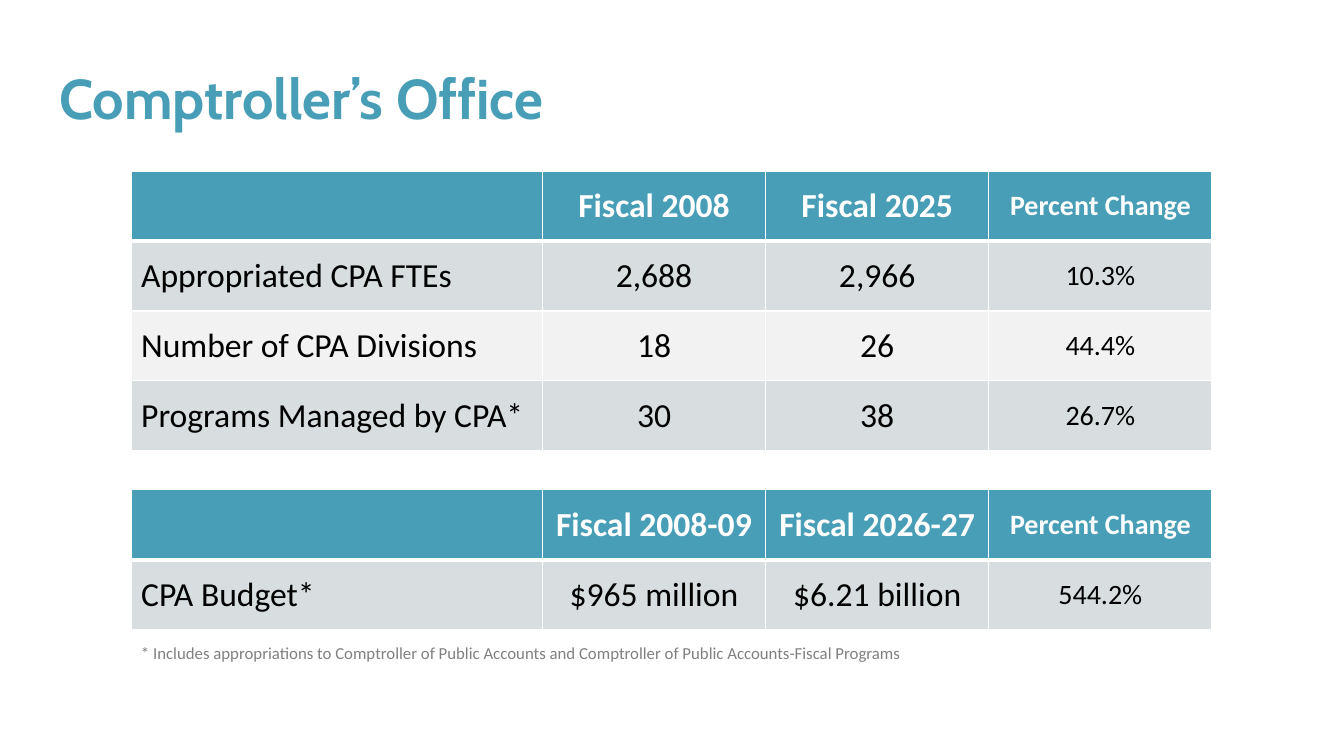
from dataclasses import dataclass

from lxml.etree import SubElement
from pptx import Presentation
from pptx.dml.color import RGBColor
from pptx.enum.text import MSO_ANCHOR as Anchor, PP_ALIGN as Align
from pptx.oxml.ns import qn
from pptx.util import Inches, Pt

TEAL, GREY, LIGHT, WHITE, BLACK = "489EB6", "D8DDE0", "F2F2F2", "FFFFFF", "000000"
LEFT = 1.3
ROW_HEIGHT = 0.693
COL_WIDTHS = (4.08, 2.214, 2.214, 2.214)


@dataclass
class DataTable:
    top: float
    rows: list[tuple[str, ...]]


TABLES = [
    DataTable(1.7, [
        ("", "Fiscal 2008", "Fiscal 2025", "Percent Change"),
        ("Appropriated CPA FTEs", "2,688", "2,966", "10.3%"),
        ("Number of CPA Divisions", "18", "26", "44.4%"),
        ("Programs Managed by CPA*", "30", "38", "26.7%"),
    ]),
    DataTable(4.86, [
        ("", "Fiscal 2008-09", "Fiscal 2026-27", "Percent Change"),
        ("CPA Budget*", "$965 million", "$6.21 billion", "544.2%"),
    ]),
]


def rgb(color: str) -> RGBColor:
    return RGBColor.from_string(color)


def set_font(p, size: float, color: str, bold: bool = False, name: str = "Calibri") -> None:
    f = p.font
    f.name, f.size, f.bold = name, Pt(size), bold
    f.color.rgb = rgb(color)


def set_borders(cell, top: float, bottom: float) -> None:
    tcPr = cell._tc.get_or_add_tcPr()
    for side, width in (("L", 1), ("R", 1), ("T", top), ("B", bottom)):
        ln = SubElement(tcPr, qn(f"a:ln{side}"), w=str(Pt(width)))
        fill = SubElement(ln, qn("a:solidFill"))
        SubElement(fill, qn("a:srgbClr"), val=WHITE)


def add_text(s, box: tuple[float, ...], text: str, wrap: bool):
    tf = s.shapes.add_textbox(*map(Inches, box)).text_frame
    tf.word_wrap = wrap
    p = tf.paragraphs[0]
    p.text = text
    return tf, p


def add_data_table(s, data: DataTable) -> None:
    n_rows, n_cols = len(data.rows), len(COL_WIDTHS)
    table = s.shapes.add_table(
        n_rows, n_cols, Inches(LEFT), Inches(data.top),
        Inches(sum(COL_WIDTHS)), Inches(n_rows * ROW_HEIGHT)).table
    for col, width in zip(table.columns, COL_WIDTHS):
        col.width = Inches(width)
    for i, values in enumerate(data.rows):
        table.rows[i].height = Inches(ROW_HEIGHT)
        header = i == 0
        band = TEAL if header else GREY if i % 2 else LIGHT
        for j, value in enumerate(values):
            cell = table.cell(i, j)
            set_borders(cell, 3 if i == 1 else 1, 3 if header else 1)
            cell.fill.solid()
            cell.fill.fore_color.rgb = rgb(band)
            cell.vertical_anchor = Anchor.MIDDLE
            p = cell.text_frame.paragraphs[0]
            p.text = value
            p.alignment = Align.CENTER if j else Align.LEFT
            size = 20 if j == n_cols - 1 else 24
            set_font(p, size, WHITE if header else BLACK, header)


def main() -> None:
    prs = Presentation()
    prs.slide_width, prs.slide_height = Inches(13.33), Inches(7.5)
    s = prs.slides.add_slide(prs.slide_layouts[6])

    tf, p = add_text(s, (0.49, 0.47, 12.84, 0.83), "Comptroller’s Office", True)
    tf.margin_top = tf.margin_bottom = 0
    tf.vertical_anchor = Anchor.MIDDLE
    p.line_spacing = 1.25
    set_font(p, 40, TEAL, True, "Cabin")

    for data in TABLES:
        add_data_table(s, data)

    note = ("* Includes appropriations to Comptroller of Public Accounts "
            "and Comptroller of Public Accounts-Fiscal Programs")
    tf, p = add_text(s, (LEFT, 6.33, 7.76, 0.3), note, False)
    set_font(p, 12, "808080")

    prs.save("out.pptx")


if __name__ == "__main__":
    main()
